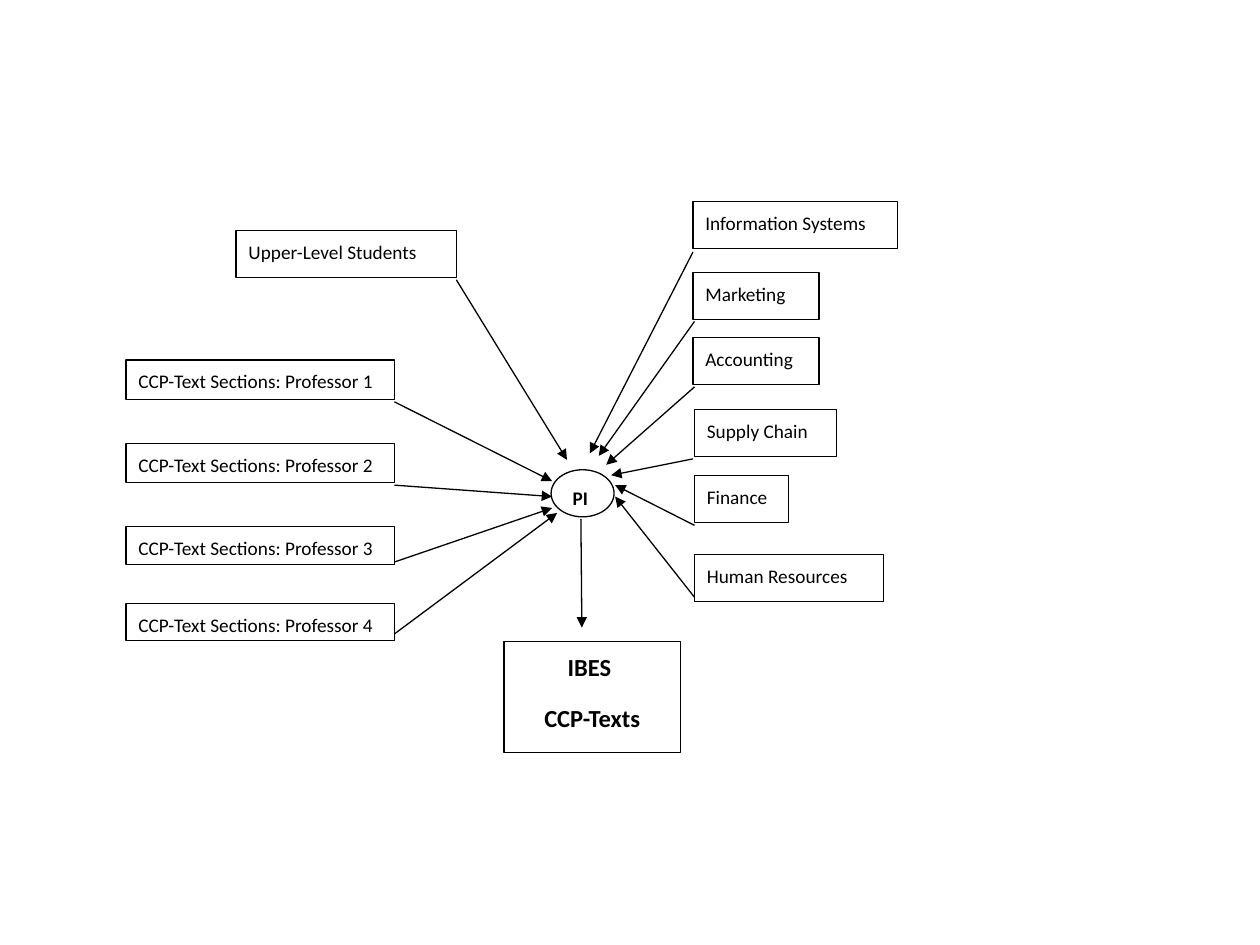
from dataclasses import dataclass

from lxml import etree
from pptx import Presentation
from pptx.dml.color import RGBColor
from pptx.enum.shapes import MSO_CONNECTOR, MSO_SHAPE
from pptx.enum.text import MSO_ANCHOR, PP_ALIGN
from pptx.oxml.ns import qn
from pptx.slide import Slide
from pptx.util import Cm, Pt

RECT = MSO_SHAPE.RECTANGLE
OVAL = MSO_SHAPE.OVAL
STRAIGHT = MSO_CONNECTOR.STRAIGHT
TOP = MSO_ANCHOR.TOP
LEFT = PP_ALIGN.LEFT
CENTER = PP_ALIGN.CENTER

COLORS = {"ink": "000000", "paper": "FFFFFF"}
FONT = "Calibri"


@dataclass
class Box:
    text: str
    left: float
    top: float
    width: float
    height: float = 0.95
    form: int = RECT
    size: int = 11
    bold: bool = False
    align: int = LEFT


@dataclass
class Arrow:
    x: float
    y: float
    to_x: float
    to_y: float


@dataclass
class Topic:
    name: str
    left: float
    top: float
    width: float
    arrow: Arrow


@dataclass
class Section:
    top: float
    height: float
    arrow: Arrow


SECTIONS = [
    Section(7.26, 0.79, Arrow(7.95, 8.1, 11.13, 9.7)),
    Section(8.94, 0.79, Arrow(7.95, 9.78, 11.13, 10.01)),
    Section(10.62, 0.76, Arrow(7.95, 11.33, 11.13, 10.24)),
    Section(12.17, 0.74, Arrow(7.95, 12.78, 11.23, 10.34)),
]

TOPICS = [
    Topic("Upper-Level Students", 4.76, 4.65, 4.45, Arrow(9.2, 5.64, 11.43, 9.27)),
    Topic("Information Systems", 13.97, 4.06, 4.13, Arrow(13.97, 5.08, 11.89, 9.14)),
    Topic("Marketing", 13.97, 5.49, 2.54, Arrow(14, 6.48, 12.07, 9.19)),
    Topic("Accounting", 13.97, 6.81, 2.54, Arrow(14, 7.8, 12.22, 9.37)),
    Topic("Supply Chain", 14, 8.26, 2.86, Arrow(13.97, 9.25, 12.32, 9.58)),
    Topic("Finance", 14, 9.58, 1.9, Arrow(14, 10.59, 12.4, 9.78)),
    Topic("Human Resources", 14, 11.18, 3.81, Arrow(14, 12.04, 12.4, 10.01)),
]

HUB = Box("PI", 11.11, 9.47, 1.27, form=OVAL, bold=True)
RESULT = Box("IBES \nCCP-Texts", 10.16, 12.93, 3.56, 2.24, size=14, bold=True, align=CENTER)
OUTPUT = Arrow(11.71, 10.46, 11.73, 12.65)


def color(name: str) -> RGBColor:
    return RGBColor.from_string(COLORS[name])


def draw_box(slide: Slide, box: Box) -> None:
    shape = slide.shapes.add_shape(
        box.form, Cm(box.left), Cm(box.top), Cm(box.width), Cm(box.height)
    )
    shape.shadow.inherit = False
    shape.fill.solid()
    shape.fill.fore_color.rgb = color("paper")
    shape.line.color.rgb = color("ink")
    shape.line.width = Pt(0.75)
    frame = shape.text_frame
    frame.text = box.text
    frame.word_wrap = True
    frame.vertical_anchor = TOP
    for para in frame.paragraphs:
        para.alignment = box.align
        para.line_spacing = 1.15
        para.space_after = Pt(10)
        for run in para.runs:
            run.font.name = FONT
            run.font.size = Pt(box.size)
            run.font.bold = box.bold
            run.font.color.rgb = color("ink")


def draw_arrow(slide: Slide, arrow: Arrow) -> None:
    line = slide.shapes.add_connector(
        STRAIGHT, Cm(arrow.x), Cm(arrow.y), Cm(arrow.to_x), Cm(arrow.to_y)
    )
    line.line.color.rgb = color("ink")
    line.line.width = Pt(0.75)
    props = line.element.spPr
    etree.SubElement(props.find(qn("a:ln")), qn("a:tailEnd"), type="triangle")
    etree.SubElement(props, qn("a:effectLst"))


def main() -> None:
    deck = Presentation()
    deck.slide_width = Cm(25.4)
    deck.slide_height = Cm(19.05)
    slide = deck.slides.add_slide(deck.slide_layouts[6])

    draw_box(slide, RESULT)
    for number, part in enumerate(SECTIONS, 1):
        label = f"CCP-Text Sections: Professor {number}"
        draw_box(slide, Box(label, 2.54, part.top, 5.41, part.height))
    for topic in TOPICS:
        draw_box(slide, Box(topic.name, topic.left, topic.top, topic.width))
    draw_box(slide, HUB)
    for item in SECTIONS + TOPICS:
        draw_arrow(slide, item.arrow)
    draw_arrow(slide, OUTPUT)
    deck.save("out.pptx")


if __name__ == "__main__":
    main()
